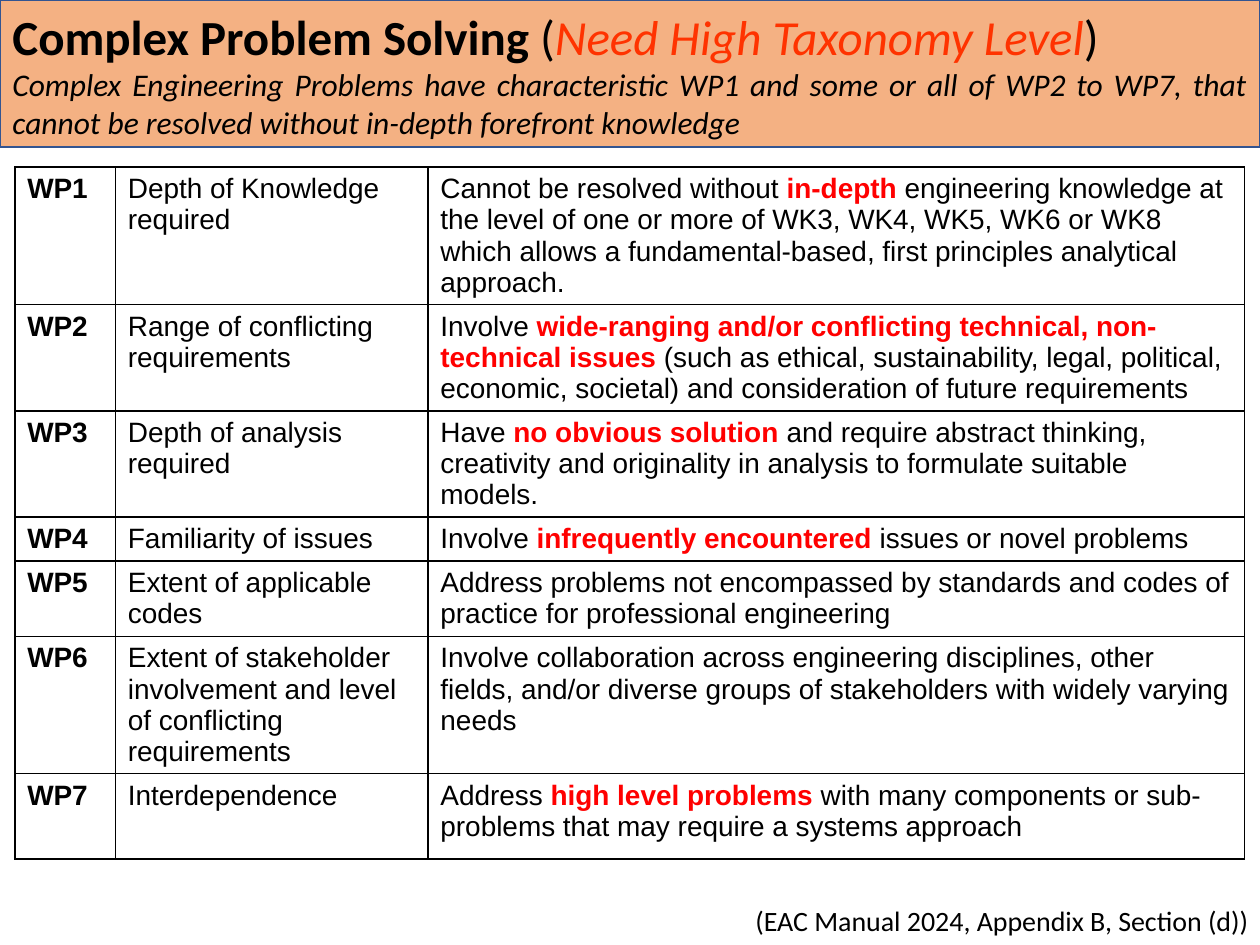
from dataclasses import dataclass

from lxml import etree
from pptx import Presentation
from pptx.dml.color import RGBColor
from pptx.enum.text import MSO_ANCHOR, MSO_AUTO_SIZE, PP_ALIGN
from pptx.oxml.ns import qn
from pptx.util import Cm, Pt

MIDDLE = MSO_ANCHOR.MIDDLE
FIXED = MSO_AUTO_SIZE.NONE
RIGHT = PP_ALIGN.RIGHT
LEFT = PP_ALIGN.LEFT
FULL = PP_ALIGN.JUSTIFY

BLACK = RGBColor(0x00, 0x00, 0x00)
RED = RGBColor(0xFF, 0x00, 0x00)
ORANGE = RGBColor(0xFF, 0x33, 0x00)
PEACH = RGBColor(0xF4, 0xB1, 0x83)
NAVY = RGBColor(0x32, 0x54, 0x91)

PLAIN = {"name": "Arial", "size": Pt(16), "bold": False, "italic": False}
STRONG = PLAIN | {"bold": True}
NOTE = PLAIN | {"name": "Calibri"}
HEAD = NOTE | {"size": Pt(28)}
LEAD = NOTE | {"size": Pt(18), "italic": True}

WIDTHS = (2.03, 6.3, 16.46)
MARGINS = {
    "margin_left": Cm(0.25),
    "margin_right": Cm(0.25),
    "margin_top": Cm(0.13),
    "margin_bottom": Cm(0.13),
}


@dataclass
class Span:
    text: str
    form: dict
    color: RGBColor = BLACK


@dataclass
class Trait:
    code: str
    name: str
    text: str
    height: float


TRAITS = (
    Trait("WP1", "Depth of Knowledge required",
          "Cannot be resolved without *in-depth *engineering knowledge at the level of "
          "one or more of WK3, WK4, WK5, WK6 or WK8 which allows a fundamental-based, "
          "first principles analytical approach.", 2.74),
    Trait("WP2", "Range of conflicting requirements",
          "Involve *wide-ranging and/or conflicting technical, non-technical issues* "
          "(such as ethical, sustainability, legal, political, economic, societal) "
          "and consideration of future requirements", 2.12),
    Trait("WP3", "Depth of analysis required",
          "Have *no obvious solution *and require abstract thinking, creativity and "
          "originality in analysis to formulate suitable models.", 2.12),
    Trait("WP4", "Familiarity of issues",
          "Involve *infrequently encountered* issues or novel problems", 0.88),
    Trait("WP5", "Extent of applicable codes",
          "Address problems not encompassed by standards and codes of practice "
          "for professional engineering", 1.5),
    Trait("WP6", "Extent of stakeholder\ninvolvement and level of conflicting requirements",
          "Involve collaboration across engineering disciplines, other fields, and/or "
          "diverse groups of stakeholders with widely varying needs", 2.76),
    Trait("WP7", "Interdependence",
          "Address *high level problems* with many components or sub-problems "
          "that may require a systems approach", 1.72),
)


def apply(item, form: dict) -> None:
    for key, value in form.items():
        setattr(item, key, value)


def write(frame, lines: list[list[Span]], align) -> None:
    for index, spans in enumerate(lines):
        para = frame.add_paragraph() if index else frame.paragraphs[0]
        para.alignment = align
        for span in spans:
            run = para.add_run()
            run.text = span.text
            apply(run.font, span.form)
            run.font.color.rgb = span.color


def mark(text: str) -> list[Span]:
    return [
        Span(part, STRONG, RED) if index % 2 else Span(part, PLAIN)
        for index, part in enumerate(text.split("*"))
    ]


def edge(cell) -> None:
    props = cell._tc.get_or_add_tcPr()
    for place, side in enumerate(("lnL", "lnR", "lnT", "lnB")):
        line = etree.Element(qn(f"a:{side}"), w=str(Pt(1)))
        fill = etree.SubElement(line, qn("a:solidFill"))
        etree.SubElement(fill, qn("a:srgbClr"), val=str(BLACK))
        props.insert(place, line)


def fill_cell(cell, lines: list[list[Span]]) -> None:
    apply(cell, MARGINS)
    cell.fill.background()
    edge(cell)
    write(cell.text_frame, lines, LEFT)


def add_head(slide) -> None:
    head = slide.shapes.title
    apply(head, {"left": 0, "top": 0, "width": Cm(25.4), "height": Cm(2.97)})
    head.fill.solid()
    head.fill.fore_color.rgb = PEACH
    head.line.color.rgb = NAVY
    head.line.width = Pt(1)
    frame = head.text_frame
    apply(frame, MARGINS | {
        "word_wrap": True, "auto_size": FIXED, "vertical_anchor": MIDDLE,
    })
    write(frame, [
        [
            Span("Complex Problem Solving ", HEAD | {"bold": True}),
            Span("(", HEAD),
            Span("Need High Taxonomy Level", HEAD | {"italic": True}, ORANGE),
            Span(")", HEAD),
        ],
        [Span("Complex Engineering Problems have characteristic WP1 and some or all of "
              "WP2 to WP7, that cannot be resolved without in-depth forefront knowledge",
              LEAD)],
    ], FULL)


def add_grid(slide) -> None:
    high = sum(trait.height for trait in TRAITS)
    grid = slide.shapes.add_table(
        len(TRAITS), len(WIDTHS), Cm(0.3), Cm(3.37), Cm(sum(WIDTHS)), Cm(high)
    ).table
    apply(grid, {"first_row": False, "horz_banding": False})
    for column, width in zip(grid.columns, WIDTHS):
        column.width = Cm(width)
    for row, trait in zip(grid.rows, TRAITS):
        row.height = Cm(trait.height)
        texts = (
            [[Span(trait.code, STRONG)]],
            [[Span(line, PLAIN)] for line in trait.name.split("\n")],
            [mark(trait.text)],
        )
        for cell, lines in zip(row.cells, texts):
            fill_cell(cell, lines)


def add_note(slide) -> None:
    box = slide.shapes.add_textbox(Cm(1.32), Cm(18.16), Cm(24.1), Cm(0.82))
    frame = box.text_frame
    frame.word_wrap = True
    write(frame, [[Span("(EAC Manual 2024, Appendix B, Section (d))", NOTE)]], RIGHT)
    frame.paragraphs[0].line_spacing = 0.9


def main() -> None:
    deck = Presentation()
    apply(deck, {"slide_width": Cm(25.4), "slide_height": Cm(19.05)})
    slide = deck.slides.add_slide(deck.slide_layouts[5])
    add_head(slide)
    add_grid(slide)
    add_note(slide)
    deck.save("out.pptx")


if __name__ == "__main__":
    main()
